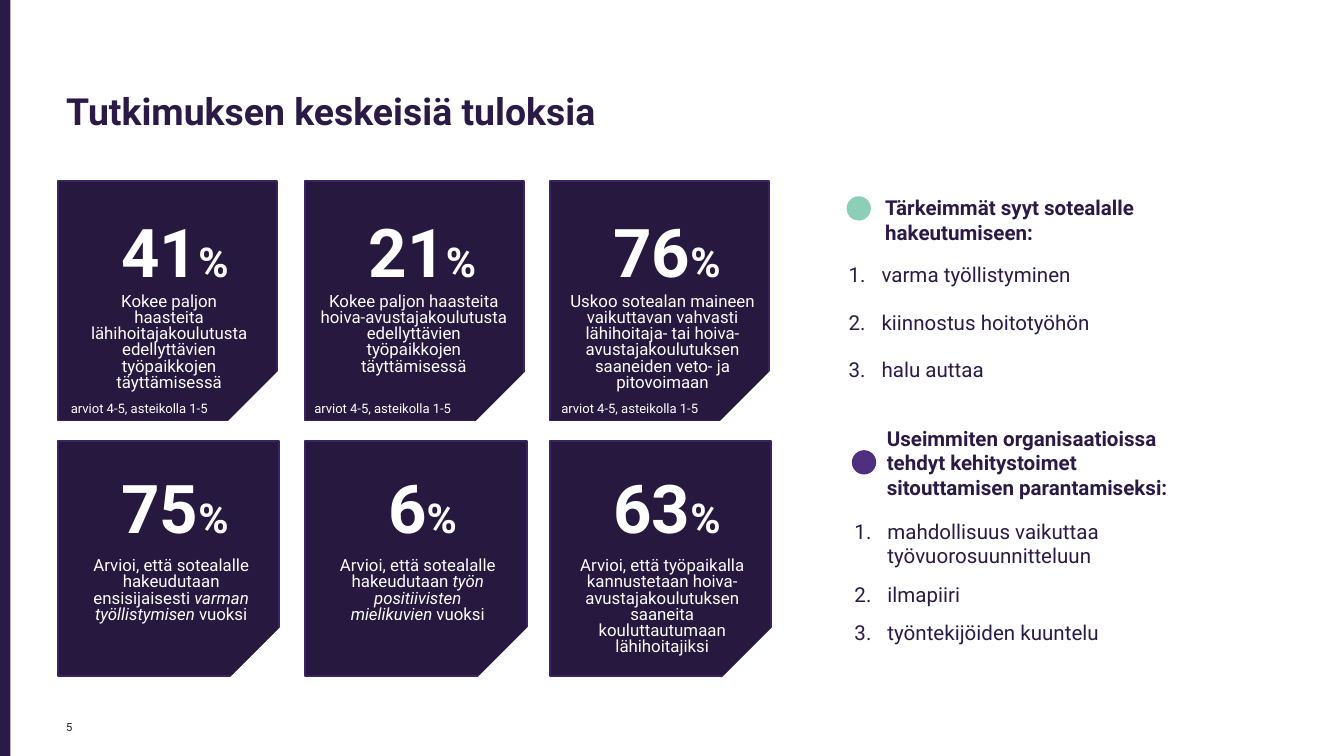
from collections import namedtuple

from pptx import Presentation
from pptx.dml.color import RGBColor
from pptx.enum.shapes import MSO_SHAPE
from pptx.enum.text import MSO_ANCHOR, PP_ALIGN
from pptx.util import Cm, Pt

RECTANGLE = MSO_SHAPE.RECTANGLE
OVAL = MSO_SHAPE.OVAL
TRIANGLE = MSO_SHAPE.RIGHT_TRIANGLE
TOP, MIDDLE, BOTTOM = MSO_ANCHOR.TOP, MSO_ANCHOR.MIDDLE, MSO_ANCHOR.BOTTOM
LEFT, CENTER, RIGHT = PP_ALIGN.LEFT, PP_ALIGN.CENTER, PP_ALIGN.RIGHT

FONT = "Roboto"
INK = "2C1A46"
CARD_FILL = "271840"
CARD_LINE = "3A235F"
WHITE = "FFFFFF"
MINT = "8DCFB6"
VIOLET = "4F2F80"

Box = namedtuple("Box", "left top width height")
Card = namedtuple("Card", "number body body_left body_width note_left")
Row = namedtuple("Row", "top width height number_top body_top note cards")
Ranking = namedtuple("Ranking", "box heading heading_left dot dot_left dot_top "
                     "text_width row_heights items")

CARD_LEFTS = (1.09, 5.77, 10.39)
NOTE = "arviot 4-5, asteikolla 1-5"
CARD_ROWS = (
    Row(3.43, 4.14, 4.52, 0.71, 2.01, NOTE, (
        Card("41", [("Kokee paljon haasteita lähihoitajakoulutusta edellyttävien "
                     "työpaikkojen täyttämisessä", False)], 0.28, 3.65, 0),
        Card("21", [("Kokee paljon haasteita hoiva-avustajakoulutusta edellyttävien "
                     "työpaikkojen täyttämisessä", False)], 0.02, 4.06, -0.08),
        Card("76", [("Uskoo sotealan maineen vaikuttavan vahvasti lähihoitaja- tai "
                     "hoiva-avustajakoulutuksen saaneiden veto- ja pitovoimaan", False)],
             0.13, 4, -0.03),
    )),
    Row(8.33, 4.19, 4.45, 0.66, 2.11, "", (
        Card("75", [("Arvioi, että sotealalle hakeudutaan ensisijaisesti ", False),
                    ("varman työllistymisen ", True), ("vuoksi", False)], 0.32, 3.65, 0),
        Card("6", [("Arvioi, että sotealalle hakeudutaan ", False),
                   ("työn positiivisten mielikuvien ", True), ("vuoksi", False)],
             0.3, 3.65, 0),
        Card("63", [("Arvioi, että työpaikalla kannustetaan hoiva- avustajakoulutuksen "
                     "saaneita kouluttautumaan lähihoitajiksi", False)], 0.3, 3.65, 0),
    )),
)
RANKINGS = (
    Ranking(Box(15.82, 3.56, 6.15, 1.19), "Tärkeimmät syyt sotealalle hakeutumiseen:",
            0.66, MINT, 0.18, 0.15, 6.86, (0.9, 0.9, 0.9),
            ("varma työllistyminen", "kiinnostus hoitotyöhön", "halu auttaa")),
    Ranking(Box(15.93, 7.92, 6.38, 1.68),
            "Useimmiten organisaatioissa tehdyt kehitystoimet sitouttamisen parantamiseksi:",
            0.58, VIOLET, 0.17, 0.59, 6.73, (1.17, 0.73, 0.73),
            ("mahdollisuus vaikuttaa työvuorosuunnitteluun", "ilmapiiri",
             "työntekijöiden kuuntelu")),
)


def color(value):
    return RGBColor.from_string(value)


def add_run(para, text, size, ink=INK, bold=False, italic=False):
    span = para.add_run()
    span.text = text
    span.font.name = FONT
    span.font.size = Pt(size)
    span.font.bold = bold
    span.font.italic = italic
    span.font.color.rgb = color(ink)


def add_text(page, box, align=LEFT, anchor=TOP, spacing=1.0):
    frame = page.shapes.add_textbox(*map(Cm, box)).text_frame
    frame.word_wrap = True
    frame.vertical_anchor = anchor
    para = frame.paragraphs[0]
    para.alignment = align
    para.line_spacing = spacing
    return para


def add_figure(page, kind, box, fill, line=None):
    figure = page.shapes.add_shape(kind, *map(Cm, box))
    figure.shadow.inherit = False
    figure.fill.solid()
    figure.fill.fore_color.rgb = color(fill)
    if line:
        figure.line.color.rgb = color(line)
        figure.line.width = Pt(1)
    else:
        figure.line.fill.background()
    return figure


def draw_frame(page, box):
    add_figure(page, RECTANGLE, Box(box.left, box.top, 0.2, box.height), INK)
    title = add_text(page, Box(box.left + 1, box.top + 0.76, 21.89, 2.77),
                     anchor=MIDDLE, spacing=0.9)
    add_run(title, "Tutkimuksen keskeisiä tuloksia", 20, bold=True)
    number = add_text(page, Box(box.left + 1, box.top + 13.23, 1.04, 0.76), anchor=BOTTOM)
    add_run(number, "5", 6)


def draw_card(page, box, row, card):
    add_figure(page, RECTANGLE, box, CARD_FILL, CARD_LINE)
    cut = 1.07
    corner = add_figure(page, TRIANGLE,
                        Box(box.left + box.width + 0.1 - cut,
                            box.top + box.height + 0.06 - cut, cut, cut), WHITE)
    corner.rotation = 270

    number = add_text(page, Box(box.left + 0.6, box.top + row.number_top, 3.23, 1.57),
                      CENTER, spacing=0.8)
    add_run(number, card.number, 36, WHITE, bold=True)
    add_run(number, "%", 22, WHITE, bold=True)

    body = add_text(page, Box(box.left + card.body_left, box.top + row.body_top,
                              card.body_width, 1.8), CENTER, spacing=0.8)
    for text, italic in card.body:
        add_run(body, text, 9, WHITE, italic=italic)

    if row.note:
        note = add_text(page, Box(box.left + card.note_left, box.top + 4.01, 4.32, 0.56),
                        anchor=BOTTOM)
        add_run(note, row.note, 7, WHITE)


def fill_cell(cell, text, align, left_margin):
    cell.fill.background()
    cell.margin_left = Cm(left_margin)
    cell.margin_right = Cm(0.1)
    cell.margin_top = cell.margin_bottom = Cm(0.13)
    para = cell.text_frame.paragraphs[0]
    para.alignment = align
    add_run(para, text, 11)


def draw_ranking(page, box, ranking):
    add_figure(page, OVAL, Box(box.left + ranking.dot_left, box.top + ranking.dot_top,
                               0.46, 0.46), ranking.dot)
    heading = add_text(page, box._replace(left=box.left + ranking.heading_left))
    add_run(heading, ranking.heading, 11, bold=True)

    widths = (0.64, ranking.text_width)
    table_box = Box(box.left, box.top + box.height + 0.1,
                    sum(widths), sum(ranking.row_heights))
    table = page.shapes.add_table(len(ranking.items), 2, *map(Cm, table_box)).table
    table.first_row = False
    table.horz_banding = False
    for column, width in zip(table.columns, widths):
        column.width = Cm(width)
    for index, item in enumerate(ranking.items):
        table.rows[index].height = Cm(ranking.row_heights[index])
        fill_cell(table.cell(index, 0), f"{index + 1}.", RIGHT, 0.1)
        fill_cell(table.cell(index, 1), item, LEFT, 0.2)


def main():
    deck = Presentation()
    deck.slide_width = Cm(25.4)
    deck.slide_height = Cm(14.29)
    page = deck.slides.add_slide(deck.slide_layouts[6])
    draw_frame(page, Box(0, 0, 25.4, 14.29))
    for row in CARD_ROWS:
        for left, card in zip(CARD_LEFTS, row.cards):
            draw_card(page, Box(left, row.top, row.width, row.height), row, card)
    for ranking in RANKINGS:
        draw_ranking(page, ranking.box, ranking)
    deck.save("out.pptx")


if __name__ == "__main__":
    main()
